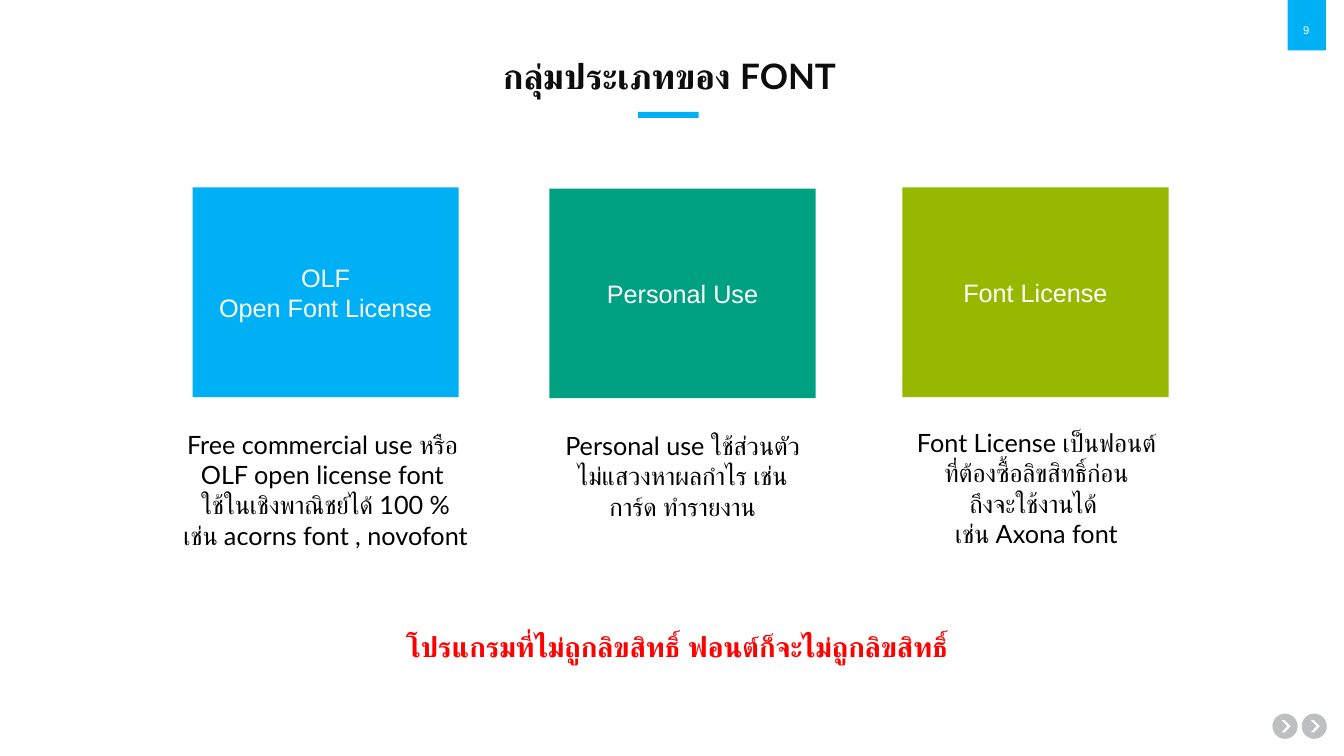
import pptx
import pptx.util
import pptx.dml.color
import pptx.enum.shapes
import pptx.enum.text
import lxml.etree

Inches = pptx.util.Inches
SHAPE = pptx.enum.shapes.MSO_SHAPE
ALIGN = pptx.enum.text.PP_ALIGN
ANCHOR = pptx.enum.text.MSO_ANCHOR

COLORS = {
    "blue": "00B0F5", "teal": "00A082", "green": "96B900", "gray": "7D8287",
    "white": "FFFFFF", "number": "FEFEFE", "title": "0D0D0D",
    "black": "000000", "red": "FF0000",
}
TITLE = "กลุ่มประเภทของ FONT"
WARNING = "โปรแกรมที่ไม่ถูกลิขสิทธิ์ ฟอนต์ก็จะไม่ถูกลิขสิทธิ์"
PAGE_NUMBER = "9"

# Each paragraph is a list of lines.
# card left, card top, color, heading, note box (left, top, width, height), note
LICENSES = [
    (1.91, 1.86, "blue", [["OLF"], ["Open Font License"]],
     (1.6, 4.21, 3.26, 1.31),
     [["Free commercial use หรือ ", "OLF open license font "],
      ["ใช้ในเชิงพาณิชย์ได้ 100 %"],
      ["เช่น acorns font , novofont"]]),
    (5.45, 1.87, "teal", [["Personal Use"]],
     (5.41, 4.22, 2.72, 1.01),
     [["Personal use ใช้ส่วนตัว", "ไม่แสวงหาผลกำไร เช่น", "การ์ด ทำรายงาน"]]),
    (8.95, 1.86, "green", [["Font License"]],
     (8.88, 4.19, 2.8, 1.62),
     [["Font License เป็นฟอนต์"], ["ที่ต้องซื้อลิขสิทธิ์ก่อน"],
      ["ถึงจะใช้งานได้ "], ["เช่น Axona font"]]),
]
CARD_SIZE = (2.64, 2.08)
BUTTON_LEFTS = (12.91, 12.62)
BUTTON_TOP, BUTTON_SIZE = 7.08, 0.25
CHEVRON_SIZE = (0.09, 0.12)

deck = pptx.Presentation()
deck.slide_width, deck.slide_height = Inches(13.33), Inches(7.5)
slide = deck.slides.add_slide(deck.slide_layouts[6])


def add_block(kind, box, color, opacity=100):
    block = slide.shapes.add_shape(kind, *map(Inches, box))
    block.shadow.inherit = False
    block.line.fill.background()
    block.fill.solid()
    block.fill.fore_color.rgb = pptx.dml.color.RGBColor.from_string(COLORS[color])
    if opacity < 100:
        tint = block.fill._xPr.find(".//" + pptx.oxml.ns.qn("a:srgbClr"))
        lxml.etree.SubElement(tint, pptx.oxml.ns.qn("a:alpha"), val=str(opacity * 1000))
    return block


def write(shape, paragraphs, size, font, color, bold=False,
          align=ALIGN.CENTER, anchor=ANCHOR.MIDDLE, spacing=None):
    frame = shape.text_frame
    frame.word_wrap = True
    frame.vertical_anchor = anchor
    for index, lines in enumerate(paragraphs):
        paragraph = frame.add_paragraph() if index else frame.paragraphs[0]
        paragraph.alignment = align
        paragraph.line_spacing = spacing
        for row, line in enumerate(lines):
            if row:
                paragraph.add_line_break()
            run = paragraph.add_run()
            run.text = line
            run.font.size = pptx.util.Pt(size)
            run.font.name = font
            run.font.bold = bold
            run.font.color.rgb = pptx.dml.color.RGBColor.from_string(COLORS[color])


def add_text(box, paragraphs, *style, **layout):
    write(slide.shapes.add_textbox(*map(Inches, box)), paragraphs, *style, **layout)


add_block(SHAPE.RECTANGLE, (12.77, -0.03, 0.38, 0.53), "blue")
add_text((12.72, 0.19, 0.47, 0.21), [[PAGE_NUMBER]], 8, "Arial", "number")

for left in BUTTON_LEFTS:
    add_block(SHAPE.OVAL, (left, BUTTON_TOP, BUTTON_SIZE, BUTTON_SIZE), "gray", 50)
    width, height = CHEVRON_SIZE
    chevron_left = left + (BUTTON_SIZE - width) / 2 + 0.01
    chevron_top = BUTTON_TOP + (BUTTON_SIZE - height) / 2
    chevron = add_block(SHAPE.CHEVRON, (chevron_left, chevron_top, width, height), "white")
    chevron.adjustments[0] = 0.66

add_text((4.37, 0.5, 4.54, 0.55), [[TITLE]], 25, "Lato", "title", bold=True, spacing=0.9)
add_block(SHAPE.RECTANGLE, (6.33, 1.11, 0.6, 0.06), "blue")

for left, top, color, heading, note_box, note in LICENSES:
    card = add_block(SHAPE.RECTANGLE, (left, top, *CARD_SIZE), color)
    write(card, heading, 18, "Arial", "white")
    add_text(note_box, note, 18, "Lato", "black", anchor=ANCHOR.TOP)

add_text((3.93, 6.2, 5.66, 0.44), [[WARNING]], 20, "Lato", "red", bold=True,
         align=ALIGN.LEFT, anchor=ANCHOR.TOP)

deck.save("out.pptx")
